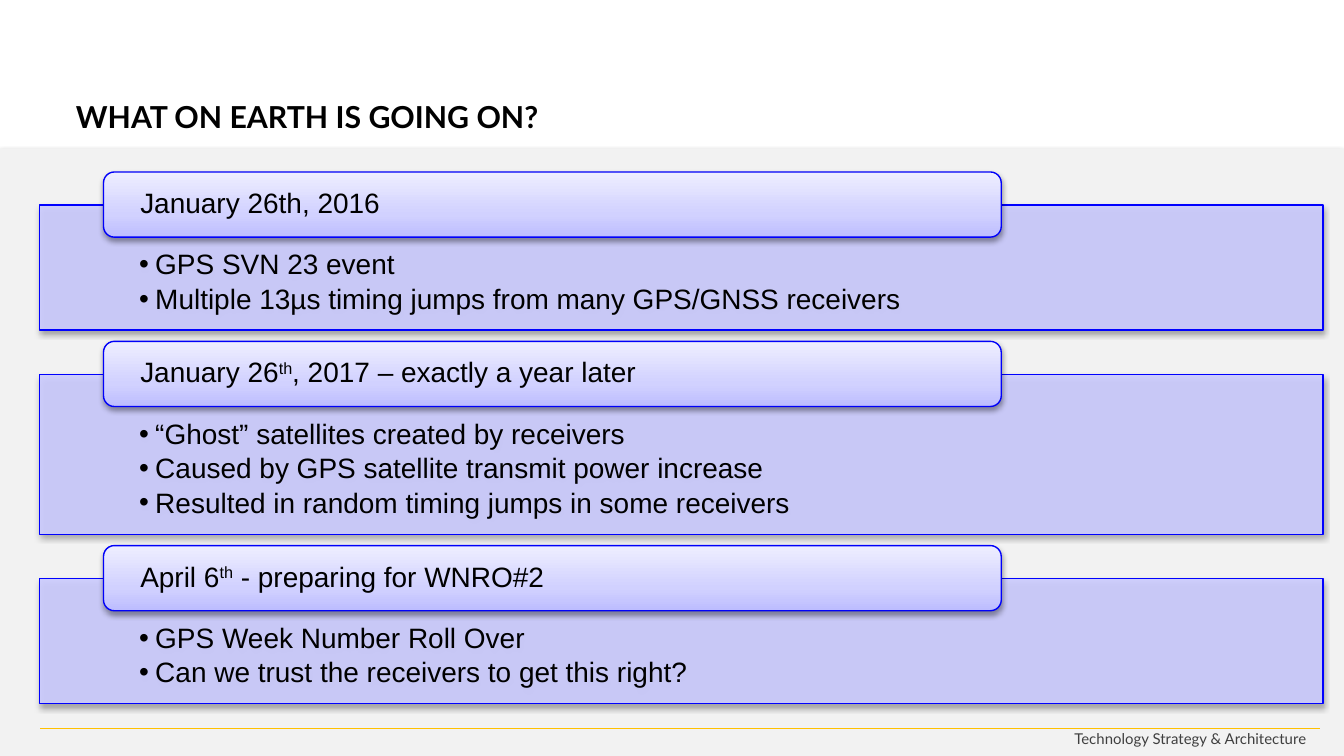
from lxml import etree
from pptx import Presentation, util as u
from pptx.dml import color
from pptx.enum import shapes, text
from pptx.oxml import ns

# 16:9 slide; grid of 100 columns and rows of a hundredth of an inch
WIDE = u.Inches(10)
HIGH = WIDE * 9 // 16
COL, ROW = WIDE // 100, u.Inches(0.01)
INK, EDGE = "000000", "0101FF"
SHADE = [(0, "BDBDFF"), (35, "D1D1FF"), (100, "EEEEFF")]
LEFT, RIGHT = text.PP_ALIGN.LEFT, text.PP_ALIGN.RIGHT
MID, TOP = text.MSO_ANCHOR.MIDDLE, text.MSO_ANCHOR.TOP
FONT = {"name": "Arial", "size": u.Pt(15)}

# Each event: header runs (every second one is raised) and bullet lines
EVENTS = [
    (["January 26th, 2016"],
     ["GPS SVN 23 event",
      "Multiple 13µs timing jumps from many GPS/GNSS receivers"]),
    (["January 26", "th", ", 2017 – exactly a year later"],
     ["“Ghost” satellites created by receivers",
      "Caused by GPS satellite transmit power increase",
      "Resulted in random timing jumps in some receivers"]),
    (["April 6", "th", " - preparing for WNRO#2"],
     ["GPS Week Number Roll Over",
      "Can we trust the receivers to get this right?"]),
]


def rgb(code):
    return color.RGBColor.from_string(code)


def put(item, values):
    for name, value in values.items():
        setattr(item, name, value)


def grid(col, row, cols, rows):
    return [round(n) for n in (col * COL, row * ROW, cols * COL, rows * ROW)]


def node(parent, tag, **values):
    return etree.SubElement(parent, ns.qn(tag), values)


def ink(font, code, **values):
    put(font, values)
    font.color.rgb = rgb(code)


def inset(frame, side, top, base):
    put(frame, {"word_wrap": True,
                "margin_left": u.Inches(side), "margin_right": u.Inches(side),
                "margin_top": u.Inches(top), "margin_bottom": u.Inches(base)})


def shadow(shape, alpha, gap):
    shape.shadow.inherit = False
    effects = shape._element.spPr.find(ns.qn("a:effectLst"))
    cast = node(effects, "a:outerShdw", blurRad=str(u.Pt(3.1)), dist=str(u.Pt(gap)),
                dir="5400000", rotWithShape="0")
    tone = node(cast, "a:srgbClr", val="000000")
    node(tone, "a:alpha", val=str(alpha * 1000))


def block(slide, kind, place, edge=None, alpha=35, gap=1.8):
    shape = slide.shapes.add_shape(kind, *grid(*place))
    shadow(shape, alpha, gap)
    if edge:
        shape.line.color.rgb = rgb(edge)
        shape.line.width = u.Pt(0.75)
    else:
        shape.line.fill.background()
    return shape


def flat(shape, code, alpha=100):
    shape.fill.solid()
    shape.fill.fore_color.rgb = rgb(code)
    if alpha < 100:
        tone = shape._element.spPr.find(".//" + ns.qn("a:srgbClr"))
        node(tone, "a:alpha", val=str(alpha * 1000))


def blend(shape, stops):
    shape.fill.gradient()
    shape.fill.gradient_angle = 90
    ramp = shape._element.spPr.find(".//" + ns.qn("a:gsLst"))
    for old in list(ramp):
        ramp.remove(old)
    for spot, code in stops:
        stop = node(ramp, "a:gs", pos=str(spot * 1000))
        node(stop, "a:srgbClr", val=code)


def panel(slide, row, rows, lines):
    shape = block(slide, shapes.MSO_SHAPE.RECTANGLE, (2.95, row, 95.5, rows), EDGE)
    flat(shape, "CCCCFF", 90)
    frame = shape.text_frame
    inset(frame, 0.74, 0.34, 0.12)
    frame.vertical_anchor = TOP
    for i, line in enumerate(lines):
        para = frame.paragraphs[0] if i == 0 else frame.add_paragraph()
        props = para._p.get_or_add_pPr()
        for name, value in (("marL", 0.12), ("indent", -0.12)):
            props.set(name, str(u.Inches(value)))
        node(props, "a:buFont", typeface="Arial")
        node(props, "a:buChar", char="•")
        put(para, {"level": 1, "alignment": LEFT, "line_spacing": 0.9,
                   "space_after": u.Pt(2.25)})
        run = para.add_run()
        run.text = line
        ink(run.font, INK, **FONT)


def header(slide, row, parts):
    shape = block(slide, shapes.MSO_SHAPE.ROUNDED_RECTANGLE,
                  (7.7, row, 66.8, 48.5), "0000FA", 38, 1.6)
    blend(shape, SHADE)
    frame = shape.text_frame
    inset(frame, 0.25, 0, 0)
    frame.vertical_anchor = MID
    para = frame.paragraphs[0]
    put(para, {"alignment": LEFT, "line_spacing": 0.9})
    for i, part in enumerate(parts):
        run = para.add_run()
        run.text = part
        ink(run.font, INK, **FONT)
        if i % 2:
            run._r.get_or_add_rPr().set("baseline", "30000")


def title(slide, words):
    shape = slide.shapes.title
    put(shape, dict(zip(("left", "top", "width", "height"),
                        grid(4.65, 74.5, 91.8, 24))))
    frame = shape.text_frame
    frame.text = words
    frame.vertical_anchor = MID
    para = frame.paragraphs[0]
    para.alignment = LEFT
    ink(para.runs[0].font, INK, name="Lato", size=u.Pt(16.2), bold=True)


def footer(slide, words):
    box = slide.shapes.add_textbox(*grid(77.4, 538, 20.8, 24))
    frame = box.text_frame
    inset(frame, 0.1, 0.05, 0.05)
    para = frame.paragraphs[0]
    para.alignment = RIGHT
    run = para.add_run()
    run.text = words
    ink(run.font, "3F3F3F", name="Lato", size=u.Pt(8))
    # Rule above the footer
    left, top, wide, _ = grid(3, 542, 95.2, 0)
    rule = slide.shapes.add_connector(shapes.MSO_CONNECTOR.STRAIGHT,
                                      left, top, left + wide, top)
    rule.line.color.rgb = rgb("FFC000")
    rule.line.width = u.Pt(0.75)
    node(rule._element.spPr, "a:effectLst")


def main():
    deck = Presentation()
    put(deck, {"slide_width": WIDE, "slide_height": HIGH})
    slide = deck.slides.add_slide(deck.slide_layouts[5])

    # Grey ground, title and footer
    ground = block(slide, shapes.MSO_SHAPE.RECTANGLE, (0, 110.5, 100, 452))
    flat(ground, "F2F2F2")
    title(slide, "WHAT ON EARTH IS GOING ON?")
    footer(slide, "Technology Strategy & Architecture")

    # Stacked events: each header straddles the top edge of its panel
    row = 152.5
    for parts, lines in EVENTS:
        rows = 41 + 26 * len(lines)
        panel(slide, row, rows, lines)
        header(slide, row - 24.5, parts)
        row += rows + 33

    deck.save("out.pptx")


if __name__ == "__main__":
    main()
